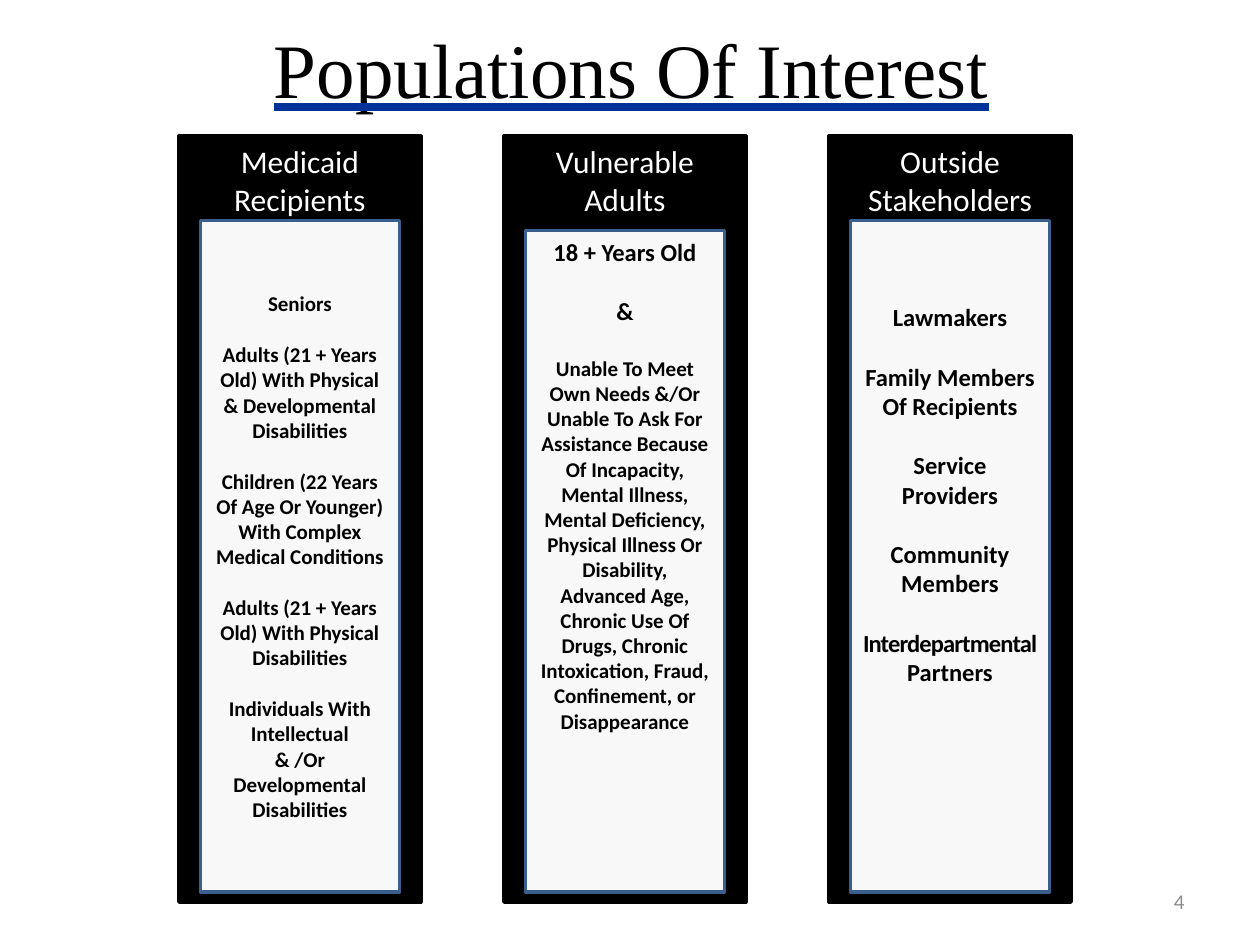
from dataclasses import dataclass

from lxml import etree
from pptx import Presentation
from pptx.dml.color import RGBColor
from pptx.enum.shapes import MSO_SHAPE as SHAPE
from pptx.enum.text import MSO_ANCHOR as ANCHOR, MSO_UNDERLINE as UNDERLINE, PP_ALIGN as ALIGN
from pptx.oxml.ns import qn
from pptx.util import Inches, Pt


@dataclass(frozen=True)
class Theme:
    black: str = "000000"
    white: str = "FFFFFF"
    panel: str = "F8F8F8"
    border: str = "3A5F8C"
    underline: str = "003399"
    muted: str = "8C8C8C"
    title_font: str = "Times New Roman"
    font: str = "Calibri"
    title: int = 44
    heading: int = 18
    large: int = 14
    small: int = 12
    line: int = 2
    leading: float = 1.22


T = Theme()
COL_LEFT, COL_TOP, COL_W, COL_H, COL_PITCH = 1.42, 1.08, 1.92, 6.08, 2.58
PANEL_W, PANEL_BOTTOM = 1.58, 7.08

# Each paragraph is (text, size, starts a new block); each block follows a one-line gap.
COLUMNS = [
    dict(heading="Medicaid Recipients", top=1.75, anchor=ANCHOR.MIDDLE, bottom=0.05, items=[
        ("Seniors", T.small, False),
        ("Adults (21 + Years Old) With Physical & Developmental Disabilities", T.small, True),
        ("Children (22 Years Of Age Or Younger) With Complex Medical Conditions", T.small, True),
        ("Adults (21 + Years Old) With Physical Disabilities", T.small, True),
        ("Individuals With Intellectual", T.small, True),
        ("& /Or Developmental Disabilities", T.small, False),
    ]),
    dict(heading="Vulnerable Adults", top=1.83, anchor=ANCHOR.TOP, bottom=0.05, items=[
        ("18 + Years Old", T.large, False),
        ("&", T.large, True),
        ("Unable To Meet Own Needs &/Or Unable To Ask For Assistance Because Of Incapacity, "
         "Mental Illness, Mental Deficiency, Physical Illness Or Disability, Advanced Age, "
         "Chronic Use Of Drugs, Chronic Intoxication, Fraud, Confinement, or Disappearance",
         T.small, True),
    ]),
    dict(heading="Outside Stakeholders", top=1.75, anchor=ANCHOR.MIDDLE, bottom=1.03, items=[
        ("Lawmakers", T.large, False),
        ("Family Members Of Recipients", T.large, True),
        ("Service Providers", T.large, True),
        ("Community Members", T.large, True),
        ("Interdepartmental Partners", T.large, True),
    ]),
]
TIGHT_WORD = "Interdepartmental"


def add_run(p, text, color, **font):
    r = p.add_run()
    r.text = text
    for name, value in font.items():
        setattr(r.font, name, value)
    r.font.color.rgb = RGBColor.from_string(color)
    return r


def add_box(s, left, top, width, height, fill, line):
    sp = s.shapes.add_shape(SHAPE.RECTANGLE, *map(Inches, (left, top, width, height)))
    sp.shadow.inherit = False
    sp.fill.solid()
    sp.fill.fore_color.rgb = RGBColor.from_string(fill)
    sp.line.color.rgb = RGBColor.from_string(line)
    sp.line.width = Pt(T.line)
    return sp


def add_title(s, text):
    sp = s.shapes.title
    box = dict(left=0.25, top=0, width=9.52, height=1.08)
    for name, value in box.items():
        setattr(sp, name, Inches(value))
    sp.text_frame.vertical_anchor = ANCHOR.MIDDLE
    p = sp.text_frame.paragraphs[0]
    p.alignment = ALIGN.CENTER
    r = add_run(p, text, T.black, name=T.title_font, size=Pt(T.title),
                underline=UNDERLINE.HEAVY_LINE)
    # The underline fill belongs between the text fill and the typeface.
    u_fill = etree.Element(qn("a:uFill"))
    solid = etree.SubElement(u_fill, qn("a:solidFill"))
    etree.SubElement(solid, qn("a:srgbClr"), val=T.underline)
    r.font._element.find(qn("a:solidFill")).addnext(u_fill)


def add_column(s, left, heading):
    sp = add_box(s, left, COL_TOP, COL_W, COL_H, T.black, T.black)
    tf = sp.text_frame
    tf.word_wrap, tf.vertical_anchor = True, ANCHOR.TOP
    p = tf.paragraphs[0]
    p.alignment = ALIGN.CENTER
    add_run(p, heading, T.white, name=T.font, size=Pt(T.heading))


def add_panel(s, column_left, top, anchor, bottom, items):
    left = column_left + (COL_W - PANEL_W) / 2
    sp = add_box(s, left, top, PANEL_W, PANEL_BOTTOM - top, T.panel, T.border)
    tf = sp.text_frame
    tf.word_wrap, tf.vertical_anchor, tf.margin_bottom = True, anchor, Inches(bottom)
    gap = Pt(items[0][1] * T.leading)
    for i, (text, size, new_block) in enumerate(items):
        p = tf.add_paragraph() if i else tf.paragraphs[0]
        p.alignment = ALIGN.CENTER
        p.space_before = gap if new_block else Pt(0)
        font = dict(name=T.font, size=Pt(size), bold=True)
        if text.startswith(TIGHT_WORD):
            r = add_run(p, TIGHT_WORD, T.black, **font)
            r.font._element.set("spc", "-50")
            text = text.removeprefix(TIGHT_WORD)
        add_run(p, text, T.black, **font)


def add_page_number(s, number):
    sp = s.shapes.add_textbox(*map(Inches, (7.17, 6.95, 2.33, 0.4)))
    tf = sp.text_frame
    tf.word_wrap, tf.vertical_anchor = True, ANCHOR.MIDDLE
    p = tf.paragraphs[0]
    p.alignment = ALIGN.RIGHT
    add_run(p, number, T.muted, name=T.font, size=Pt(T.small))


def main():
    prs = Presentation()
    prs.slide_width, prs.slide_height = Inches(10), Inches(7.5)
    s = prs.slides.add_slide(prs.slide_layouts.get_by_name("Title Only"))
    add_title(s, "Populations Of Interest")
    for i, column in enumerate(COLUMNS):
        left = COL_LEFT + i * COL_PITCH
        add_column(s, left, column["heading"])
        add_panel(s, left, column["top"], column["anchor"], column["bottom"], column["items"])
    add_page_number(s, "4")
    prs.save("out.pptx")


if __name__ == "__main__":
    main()
